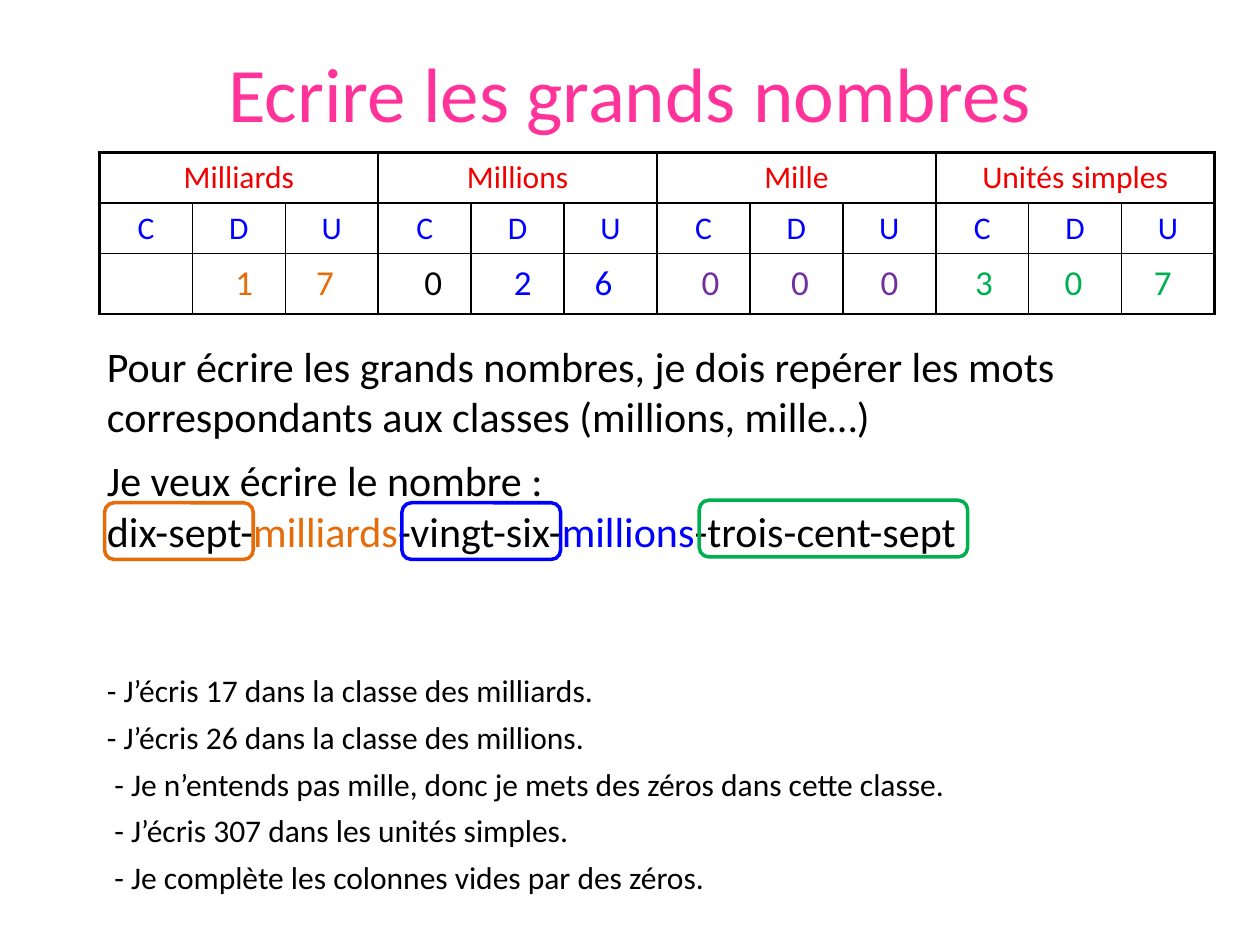
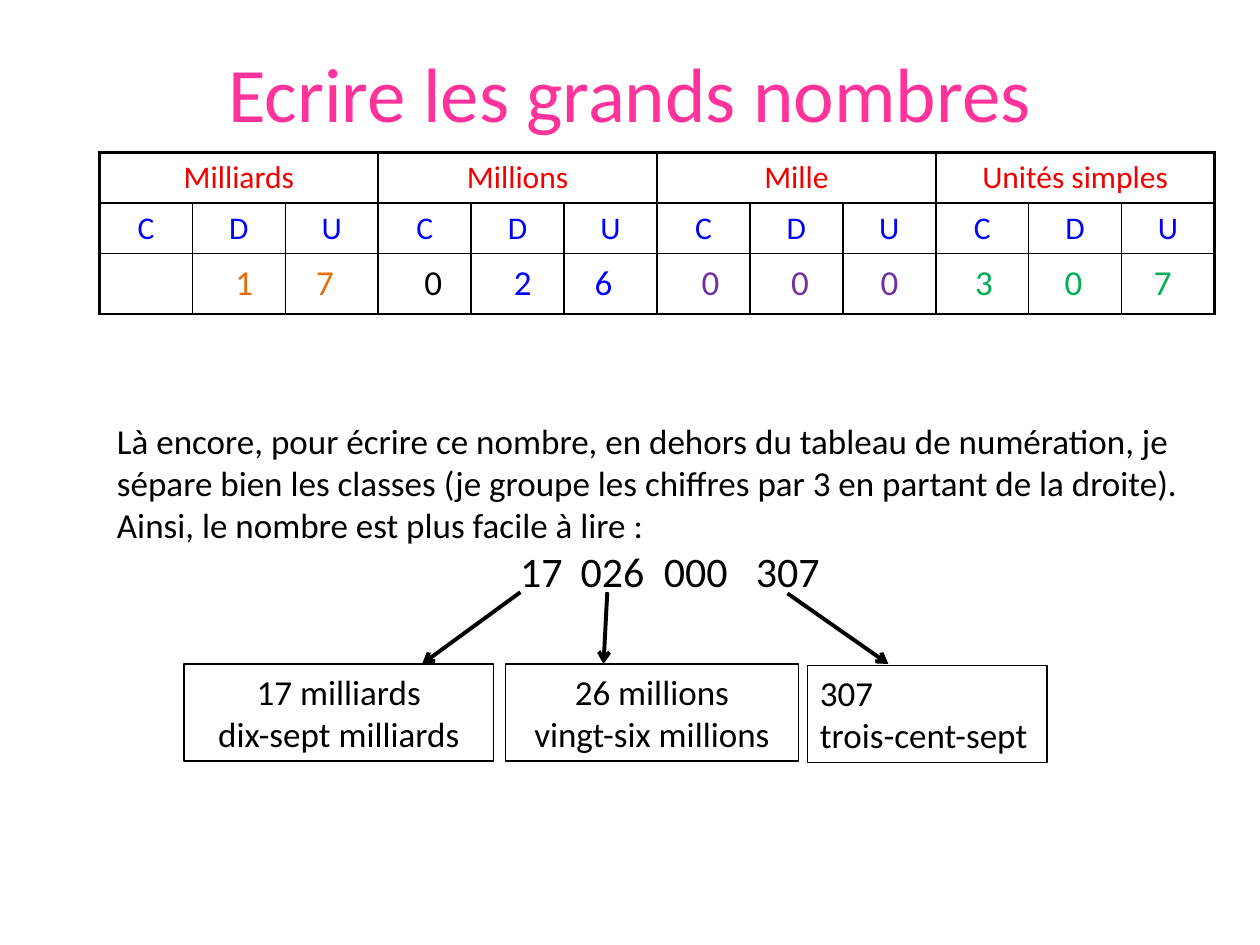
from dataclasses import dataclass

from lxml.etree import SubElement
from pptx import Presentation
from pptx.dml.color import RGBColor
from pptx.enum.shapes import MSO_CONNECTOR, MSO_SHAPE
from pptx.enum.text import MSO_ANCHOR, PP_ALIGN
from pptx.oxml.ns import qn
from pptx.shapes.autoshape import Shape
from pptx.slide import Slide
from pptx.table import _Cell
from pptx.text.text import TextFrame
from pptx.util import Inches, Pt

FONT = "Calibri"
COLORS = {
    "title": "FF3399",
    "class": "F20000",
    "black": "000000",
    "orange": "E46C0A",
    "blue": "0000FF",
    "purple": "7030A0",
    "green": "00B050",
}
CLASS_NAMES = ["Milliards", "Millions", "Mille", "Unités simples"]
RANKS = "CDU"
COLUMN_COUNT = len(CLASS_NAMES) * len(RANKS)
ROW_HEIGHTS = [0.4, 0.4, 0.48]


@dataclass(frozen=True)
class Span:
    text: str
    color: str = "black"


@dataclass(frozen=True)
class Line:
    spans: list[Span]
    size: int
    align: PP_ALIGN = PP_ALIGN.LEFT
    tabs: tuple[float, ...] = ()


@dataclass(frozen=True)
class Area:
    left: float
    top: float
    width: float
    height: float

    def lengths(self) -> list[Inches]:
        return [Inches(value) for value in (self.left, self.top, self.width, self.height)]


@dataclass(frozen=True)
class DigitGroup:
    left: float
    width: float
    digits: str
    color: str
    step: float = 0.71


@dataclass(frozen=True)
class Frame:
    area: Area
    color: str


@dataclass(frozen=True)
class Reading:
    area: Area
    lines: tuple[str, str]
    align: PP_ALIGN
    arrow: tuple[float, float, float, float]


DIGIT_GROUPS = [
    DigitGroup(1.77, 1.02, "17", "orange", 0.64),
    DigitGroup(3.27, 0.38, "0", "black"),
    DigitGroup(3.98, 1.02, "26", "blue", 0.64),
    DigitGroup(5.47, 1.89, "000", "purple"),
    DigitGroup(7.64, 1.89, "307", "green"),
]
FRAMES = [
    Frame(Area(0.83, 3.99, 1.18, 0.45), "orange"),
    Frame(Area(3.19, 3.99, 1.26, 0.45), "blue"),
    Frame(Area(5.55, 3.97, 2.13, 0.45), "green"),
]
STEPS = [
    (0.75, "- J’écris 17 dans la classe des milliards."),
    (0.75, "- J’écris 26 dans la classe des millions."),
    (0.81, "- Je n’entends pas mille, donc je mets des zéros dans cette classe."),
    (0.81, "- J’écris 307 dans les unités simples."),
    (0.81, "- Je complète les colonnes vides par des zéros."),
]
READINGS = [
    Reading(Area(1.46, 5.27, 2.46, 0.77), ("17 milliards", "dix-sept milliards"),
            PP_ALIGN.CENTER, (4.13, 4.7, 3.35, 5.27)),
    Reading(Area(4.01, 5.27, 2.33, 0.77), ("26 millions", "vingt-six millions"),
            PP_ALIGN.CENTER, (4.82, 4.7, 4.79, 5.27)),
    Reading(Area(6.41, 5.28, 1.9, 0.77), ("307", "trois-cent-sept"),
            PP_ALIGN.LEFT, (6.25, 4.71, 7.05, 5.27)),
]


def rgb(name: str) -> RGBColor:
    return RGBColor.from_string(COLORS[name])


def write_lines(text_frame: TextFrame, lines: list[Line]) -> None:
    text_frame.word_wrap = True
    text_frame.text = "\n".join("".join(span.text for span in line.spans) for line in lines)
    for para, line in zip(text_frame.paragraphs, lines):
        para.alignment = line.align
        if line.tabs:
            tab_list = SubElement(para._p.get_or_add_pPr(), qn("a:tabLst"))
            for position in line.tabs:
                SubElement(tab_list, qn("a:tab"), pos=str(Inches(position)), algn="l")
        para.runs[0].text = line.spans[0].text
        for span in line.spans[1:]:
            para.add_run().text = span.text
        for run, span in zip(para.runs, line.spans):
            run.font.name = FONT
            run.font.size = Pt(line.size)
            run.font.color.rgb = rgb(span.color)


def add_text(page: Slide, area: Area, lines: list[Line]) -> Shape:
    box = page.shapes.add_textbox(*area.lengths())
    write_lines(box.text_frame, lines)
    return box


def add_outline(page: Slide, preset: MSO_SHAPE, area: Area, color: str, weight: float) -> Shape:
    shape = page.shapes.add_shape(preset, *area.lengths())
    shape.shadow.inherit = False
    shape.fill.background()
    shape.line.color.rgb = rgb(color)
    shape.line.width = Pt(weight)
    return shape


def add_arrow(page: Slide, ends: tuple[float, float, float, float]) -> None:
    arrow = page.shapes.add_connector(MSO_CONNECTOR.STRAIGHT, *[Inches(end) for end in ends])
    arrow.line.color.rgb = rgb("black")
    arrow.line.width = Pt(2.25)
    SubElement(arrow.line._get_or_add_ln(), qn("a:tailEnd"), type="arrow")
    SubElement(arrow._element.spPr, qn("a:effectLst"))


def style_cell(cell: _Cell, row: int, column: int) -> None:
    thick_sides = {
        "a:lnL": column % 3 == 0,
        "a:lnR": row == 0 or column % 3 == 2,
        "a:lnT": row == 0,
        "a:lnB": row == len(ROW_HEIGHTS) - 1,
    }
    properties = cell._tc.get_or_add_tcPr()
    for tag, thick in thick_sides.items():
        border = SubElement(properties, qn(tag), w=str(Pt(1.5 if thick else 1)))
        fill = SubElement(border, qn("a:solidFill"))
        SubElement(fill, qn("a:srgbClr"), val=COLORS["black"])
    cell.fill.background()


def add_number_table(page: Slide) -> None:
    area = Area(0.79, 1.21, 8.85, sum(ROW_HEIGHTS))
    table = page.shapes.add_table(len(ROW_HEIGHTS), COLUMN_COUNT, *area.lengths()).table
    table.first_row = False
    table.horz_banding = False
    for row, height in zip(table.rows, ROW_HEIGHTS):
        row.height = Inches(height)
    for row in range(len(ROW_HEIGHTS)):
        for column in range(COLUMN_COUNT):
            style_cell(table.cell(row, column), row, column)
    for index, name in enumerate(CLASS_NAMES):
        first = index * len(RANKS)
        header = table.cell(0, first)
        header.merge(table.cell(0, first + len(RANKS) - 1))
        write_lines(header.text_frame, [Line([Span(name, "class")], 18, PP_ALIGN.CENTER)])
        for offset, rank in enumerate(RANKS):
            cell = table.cell(1, first + offset)
            cell.vertical_anchor = MSO_ANCHOR.MIDDLE
            write_lines(cell.text_frame, [Line([Span(rank, "blue")], 18, PP_ALIGN.CENTER)])


def add_digits(page: Slide) -> None:
    for group in DIGIT_GROUPS:
        tabs = tuple(group.step * index for index in range(1, len(group.digits)))
        line = Line([Span("\t".join(group.digits), group.color)], 20, tabs=tabs)
        add_text(page, Area(group.left, 2.02, group.width, 0.44), [line])


def add_page(deck: Presentation) -> Slide:
    page = deck.slides.add_slide(deck.slide_layouts[6])
    title = Line([Span("Ecrire les grands nombres", "title")], 44, PP_ALIGN.CENTER)
    box = add_text(page, Area(0.5, 0.3, 9, 0.85), [title])
    box.text_frame.vertical_anchor = MSO_ANCHOR.MIDDLE
    add_number_table(page)
    add_digits(page)
    return page


def build_writing_page(deck: Presentation) -> None:
    page = add_page(deck)
    advice = ("Pour écrire les grands nombres, je dois repérer les mots "
              "correspondants aux classes (millions, mille…)")
    add_text(page, Area(0.75, 2.65, 8.98, 0.91), [Line([Span(advice)], 24)])
    number_words = [
        Span("dix-sept-"), Span("milliards", "orange"), Span("-vingt-six-"),
        Span("millions", "blue"), Span("-trois-cent-sept"),
    ]
    add_text(page, Area(0.75, 3.56, 8.98, 0.91),
             [Line([Span("Je veux écrire le nombre :")], 24), Line(number_words, 24)])
    for frame in FRAMES:
        add_outline(page, MSO_SHAPE.ROUNDED_RECTANGLE, frame.area, frame.color, 2)
    for index, (left, text) in enumerate(STEPS):
        add_text(page, Area(left, 5.28 + 0.37 * index, 9, 0.4), [Line([Span(text)], 18)])


def build_reading_page(deck: Presentation) -> None:
    page = add_page(deck)
    advice = ("Là encore, pour écrire ce nombre, en dehors du tableau de numération, "
              "je sépare bien les classes (je groupe les chiffres par 3 en partant de la "
              "droite). Ainsi, le nombre est plus facile à lire :")
    number = Line([Span("\t17\t026\t000\t307")], 24, tabs=(3.2, 3.68, 4.34, 5.07))
    add_text(page, Area(0.83, 3.28, 8.98, 1.51), [Line([Span(advice)], 20), number])
    for reading in READINGS:
        box = add_outline(page, MSO_SHAPE.RECTANGLE, reading.area, "black", 0.75)
        write_lines(box.text_frame,
                    [Line([Span(text)], 20, reading.align) for text in reading.lines])
        add_arrow(page, reading.arrow)


def main() -> None:
    deck = Presentation()
    deck.slide_width = Inches(10)
    deck.slide_height = Inches(7.5)
    build_writing_page(deck)
    build_reading_page(deck)
    deck.save("out.pptx")


if __name__ == "__main__":
    main()
